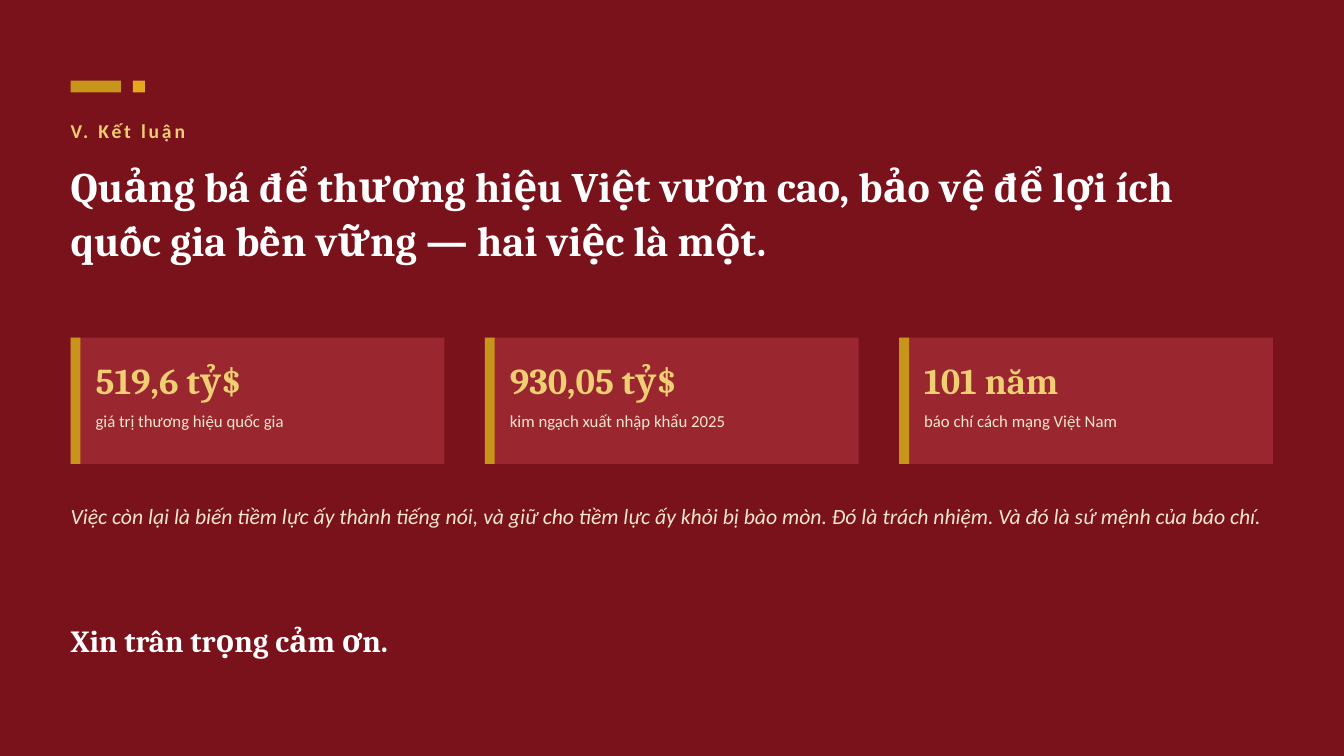
from pptx import Presentation
from pptx.dml.color import RGBColor
from pptx.enum.shapes import MSO_SHAPE
from pptx.enum.text import MSO_ANCHOR, MSO_AUTO_SIZE, PP_ALIGN
from pptx.util import Cm, Pt

RECT = MSO_SHAPE.RECTANGLE
TOP, MIDDLE = MSO_ANCHOR.TOP, MSO_ANCHOR.MIDDLE
LEFT, FIXED = PP_ALIGN.LEFT, MSO_AUTO_SIZE.NONE

WINE, ROSE, GOLD, AMBER = "7A121B", "9A2630", "C8951B", "E3A81E"
SAND, CREAM, WHITE = "F0CE73", "F3E6CC", "FFFFFF"
SERIF, SANS = "Cambria", "Calibri"

LABEL = {"name": SANS, "size": Pt(14), "bold": True}
TITLE = {"name": SERIF, "size": Pt(30), "bold": True}
VALUE = {"name": SERIF, "size": Pt(26), "bold": True}
NOTE = {"name": SANS, "size": Pt(12), "bold": False}
QUOTE = {"name": SANS, "size": Pt(15.5), "italic": True}
THANKS = {"name": SERIF, "size": Pt(22), "bold": True}

EDGE, WIDE = 1.78, 30.3
GAP = 1.02
FACTS = [
    ("519,6 tỷ$", "giá trị thương hiệu quốc gia"),
    ("930,05 tỷ$", "kim ngạch xuất nhập khẩu 2025"),
    ("101 năm", "báo chí cách mạng Việt Nam"),
]


def paint(target, tone):
    """Give a fill or a font colour format the hex colour."""
    target.rgb = RGBColor.from_string(tone)


def block(slide, x, y, w, h, tone):
    shape = slide.shapes.add_shape(RECT, Cm(x), Cm(y), Cm(w), Cm(h))
    shape.shadow.inherit = False
    shape.fill.solid()
    paint(shape.fill.fore_color, tone)
    shape.line.fill.background()


def write(shape, text, style, tone, anchor=TOP, lead=None):
    """Fill a shape with one formatted paragraph without insets."""
    frame = shape.text_frame
    frame.text = text
    layout = {"word_wrap": True, "auto_size": FIXED, "vertical_anchor": anchor,
              "margin_left": 0, "margin_right": 0,
              "margin_top": 0, "margin_bottom": 0}
    for key, value in layout.items():
        setattr(frame, key, value)
    para = frame.paragraphs[0]
    para.alignment = LEFT
    para.line_spacing = lead
    font = para.runs[0].font
    for key, value in style.items():
        setattr(font, key, value)
    paint(font.color, tone)
    return para.runs[0]


def label(slide, x, y, w, h, *args, **kwargs):
    box = slide.shapes.add_textbox(Cm(x), Cm(y), Cm(w), Cm(h))
    return write(box, *args, **kwargs)


def header(slide, x, y, w):
    block(slide, x, y, 1.27, 0.3, GOLD)
    block(slide, x + 1.57, y, 0.3, 0.3, AMBER)
    run = label(slide, x, y + 0.64, w, 1.27, "V. Kết luận", LABEL, SAND, MIDDLE)
    run.font._element.set("spc", "200")
    title = slide.shapes.title
    place = {"left": x, "top": y + 1.91, "width": w, "height": 3.81}
    for key, value in place.items():
        setattr(title, key, Cm(value))
    write(title, "Quảng bá để thương hiệu Việt vươn cao, bảo vệ để lợi ích "
          "quốc gia bền vững — hai việc là một.", TITLE, WHITE, lead=1.08)


def card(slide, x, y, w, h, value, note):
    block(slide, x, y, w, h, ROSE)
    block(slide, x, y, 0.25, h, GOLD)
    left, inner = x + 0.63, w - 1.01
    label(slide, left, y + 0.3, inner, 1.52, value, VALUE, SAND, MIDDLE)
    label(slide, left, y + 1.83, inner, 1.14, note, NOTE, CREAM)


def cards(slide, x, y, w, h):
    each = (w - GAP * (len(FACTS) - 1)) / len(FACTS)
    for i, fact in enumerate(FACTS):
        card(slide, x + i * (each + GAP), y, each, h, *fact)


def closing(slide, x, y, w):
    label(slide, x, y, w, 2.54,
          "Việc còn lại là biến tiềm lực ấy thành tiếng nói, và giữ cho tiềm "
          "lực ấy khỏi bị bào mòn. Đó là trách nhiệm. Và đó là sứ mệnh của "
          "báo chí.", QUOTE, CREAM, lead=1.15)
    label(slide, x, y + 2.8, w, 1.52, "Xin trân trọng cảm ơn.",
          THANKS, WHITE, MIDDLE)


def main():
    deck = Presentation()
    deck.slide_width, deck.slide_height = Cm(33.87), Cm(19.05)
    slide = deck.slides.add_slide(deck.slide_layouts.get_by_name("Title Only"))
    back = slide.background.fill
    back.solid()
    paint(back.fore_color, WINE)
    header(slide, EDGE, 2.03, WIDE)
    cards(slide, EDGE, 8.51, WIDE, 3.18)
    closing(slide, EDGE, 12.57, WIDE)
    deck.save("out.pptx")


if __name__ == "__main__":
    main()
